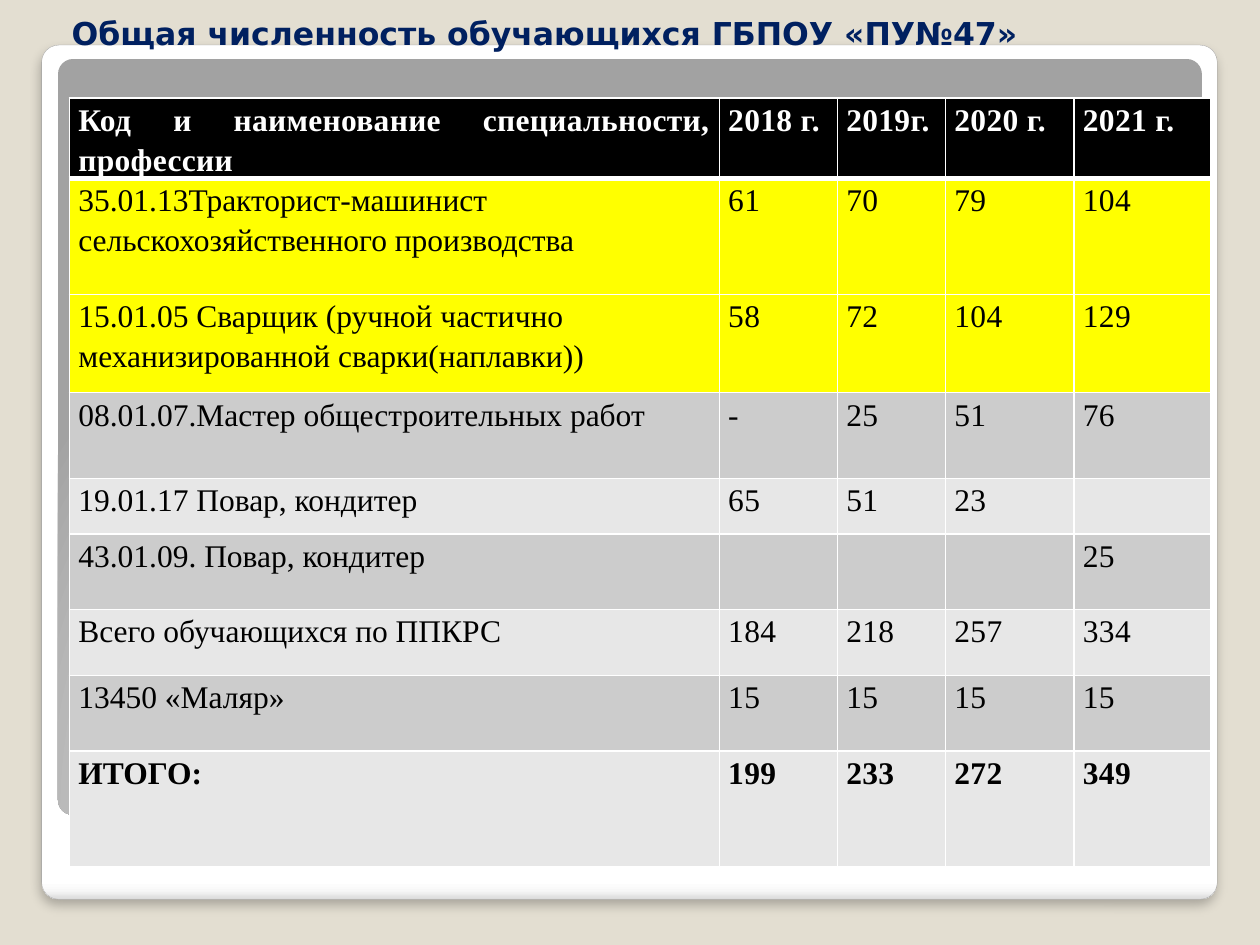
import pptx
import pptx.dml.color
import pptx.enum.shapes
import pptx.enum.text
import pptx.oxml
import pptx.oxml.ns
import pptx.util
from pptx.util import Cm, Pt

COLORS = {
    "background": "E3DED1", "title": "002060", "border": "FFFFFF", "frame_line": "A4A4A4",
    "header": "000000", "header_text": "FFFFFF", "text": "000000",
    "highlight": "FFFF00", "dark_band": "CCCCCC", "light_band": "E7E7E7",
}
TITLE = "Общая численность обучающихся ГБПОУ «ПУ№47»"
HEADER = ["Код и наименование специальности, профессии",
          "2018 г.", "2019г.", "2020 г.", "2021 г."]
PROGRAMMES = [
    ["35.01.13Тракторист-машинист сельскохозяйственного производства", "61", "70", "79", "104"],
    ["15.01.05 Сварщик (ручной частично механизированной сварки(наплавки))",
     "58", "72", "104", "129"],
    ["08.01.07.Мастер общестроительных работ", "-", "25", "51", "76"],
    ["19.01.17 Повар, кондитер", "65", "51", "23", ""],
    ["43.01.09. Повар, кондитер", "", "", "", "25"],
    ["Всего обучающихся по ППКРС", "184", "218", "257", "334"],
    ["13450 «Маляр»", "15", "15", "15", "15"],
    ["ИТОГО:", "199", "233", "272", "349"],
]
ROWS = [HEADER] + PROGRAMMES
TOTAL_ROW = len(ROWS) - 1
HIGHLIGHTED_ROWS = (1, 2)
LEFT_ALIGNED = (2, 0)
COLUMN_WIDTHS = [13.1, 2.38, 2.18, 2.59, 2.76]
ROW_HEIGHTS = [1.61, 2.34, 1.98, 1.73, 1.12, 1.52, 1.33, 1.52, 2.34]

FRAME_STOPS = [(0, "FFFFFF"), (98, "FFFFFF"), (99, "F7F7F7"), (100, "DADADA")]
PANEL_STOPS = [(0, "FFFFFF"), (55, "E1E1E1"), (100, "A2A2A2")]
DOWNWARD = '<a:lin ang="5400000" scaled="0"/>'
FROM_BELOW = ('<a:path path="circle">'
              '<a:fillToRect l="50000" t="175000" r="50000" b="-75000"/></a:path>')
NAMESPACE = pptx.oxml.ns.nsdecls("a")


def rgb(name):
    return pptx.dml.color.RGBColor.from_string(COLORS[name])


def add_rounded_panel(slide, box, stops, direction):
    panel = slide.shapes.add_shape(
        pptx.enum.shapes.MSO_SHAPE.ROUNDED_RECTANGLE, *map(Cm, box))
    panel.adjustments[0] = 0.02
    panel.shadow.inherit = False
    panel.line.fill.background()
    stop_xml = "".join(f'<a:gs pos="{position * 1000}"><a:srgbClr val="{color}"/></a:gs>'
                       for position, color in stops)
    gradient = pptx.oxml.parse_xml(
        f'<a:gradFill {NAMESPACE} rotWithShape="1"><a:gsLst>{stop_xml}</a:gsLst>'
        f'{direction}</a:gradFill>')
    properties = panel._element.spPr
    properties.find(pptx.oxml.ns.qn("a:prstGeom")).addnext(gradient)
    return panel


def add_soft_shadow(shape):
    effects = shape._element.spPr.find(pptx.oxml.ns.qn("a:effectLst"))
    effects.append(pptx.oxml.parse_xml(
        f'<a:outerShdw {NAMESPACE} blurRad="{Pt(6)}" dist="{Pt(4)}" dir="5400000" '
        'algn="t" rotWithShape="0"><a:srgbClr val="000000"><a:alpha val="25000"/>'
        '</a:srgbClr></a:outerShdw>'))


def set_borders(cell, **widths):
    """Draw the cell's edges; widths maps L, R, T and B to points."""
    for side, width in widths.items():
        cell._tc.get_or_add_tcPr().append(pptx.oxml.parse_xml(
            f'<a:ln{side} {NAMESPACE} w="{Pt(width)}"><a:solidFill>'
            f'<a:srgbClr val="{COLORS["border"]}"/></a:solidFill></a:ln{side}>'))


def row_color(row):
    if row == 0:
        return rgb("header")
    if row in HIGHLIGHTED_ROWS:
        return rgb("highlight")
    return rgb("dark_band" if row % 2 else "light_band")


def fill_cell(cell, row, column, text):
    cell.margin_left = cell.margin_right = Cm(0.18)
    cell.margin_top = cell.margin_bottom = 0
    set_borders(cell, L=1, R=1, T=3 if row == 1 else 1, B=3 if row == 0 else 1)
    cell.fill.solid()
    cell.fill.fore_color.rgb = row_color(row)
    if not text:
        return
    cell.text_frame.text = text
    paragraph = cell.text_frame.paragraphs[0]
    align = pptx.enum.text.PP_ALIGN
    paragraph.alignment = align.LEFT if (row, column) == LEFT_ALIGNED else align.JUSTIFY
    paragraph.line_spacing = 1.15
    paragraph.space_after = Pt(10)
    font = paragraph.runs[0].font
    font.name = "Times New Roman"
    font.size = Pt(18)
    font.bold = row in (0, TOTAL_ROW)
    font.color.rgb = rgb("header_text" if row == 0 else "text")
    if row == 0 or column > 0:
        paragraph.runs[0]._r.get_or_add_rPr().set("spc", "20")


def add_title(slide):
    title = slide.shapes.title
    title.left, title.top, title.width, title.height = map(Cm, (1.19, 0.18, 22.73, 1))
    frame = title.text_frame
    frame.text = TITLE
    frame.word_wrap = True
    frame.vertical_anchor = pptx.enum.text.MSO_ANCHOR.BOTTOM
    frame.paragraphs[0].alignment = pptx.enum.text.PP_ALIGN.LEFT
    font = frame.paragraphs[0].runs[0].font
    font.name = "DejaVu Sans"
    font.size = Pt(18)
    font.bold = True
    font.color.rgb = rgb("title")


def add_enrolment_table(slide):
    table = slide.shapes.add_table(
        len(ROWS), len(HEADER), Cm(1.4), Cm(1.98),
        Cm(sum(COLUMN_WIDTHS)), Cm(sum(ROW_HEIGHTS))).table
    for column, width in zip(table.columns, COLUMN_WIDTHS):
        column.width = Cm(width)
    for row, (values, height) in enumerate(zip(ROWS, ROW_HEIGHTS)):
        table.rows[row].height = Cm(height)
        for column, text in enumerate(values):
            fill_cell(table.cell(row, column), row, column, text)


def main():
    deck = pptx.Presentation()
    deck.slide_width, deck.slide_height = Cm(25.4), Cm(19.05)
    slide = deck.slides.add_slide(deck.slide_layouts[5])
    slide.background.fill.solid()
    slide.background.fill.fore_color.rgb = rgb("background")

    frame = add_rounded_panel(slide, (0.84, 0.91, 23.7, 17.22), FRAME_STOPS, DOWNWARD)
    frame.line.color.rgb = rgb("frame_line")
    frame.line.width = Pt(0.16)
    add_soft_shadow(frame)
    panel = add_rounded_panel(slide, (1.17, 1.19, 23.06, 15.24), PANEL_STOPS, FROM_BELOW)
    for backdrop in (frame, panel):
        slide.shapes.title._element.addprevious(backdrop._element)

    add_title(slide)
    add_enrolment_table(slide)
    deck.save("out.pptx")


if __name__ == "__main__":
    main()
